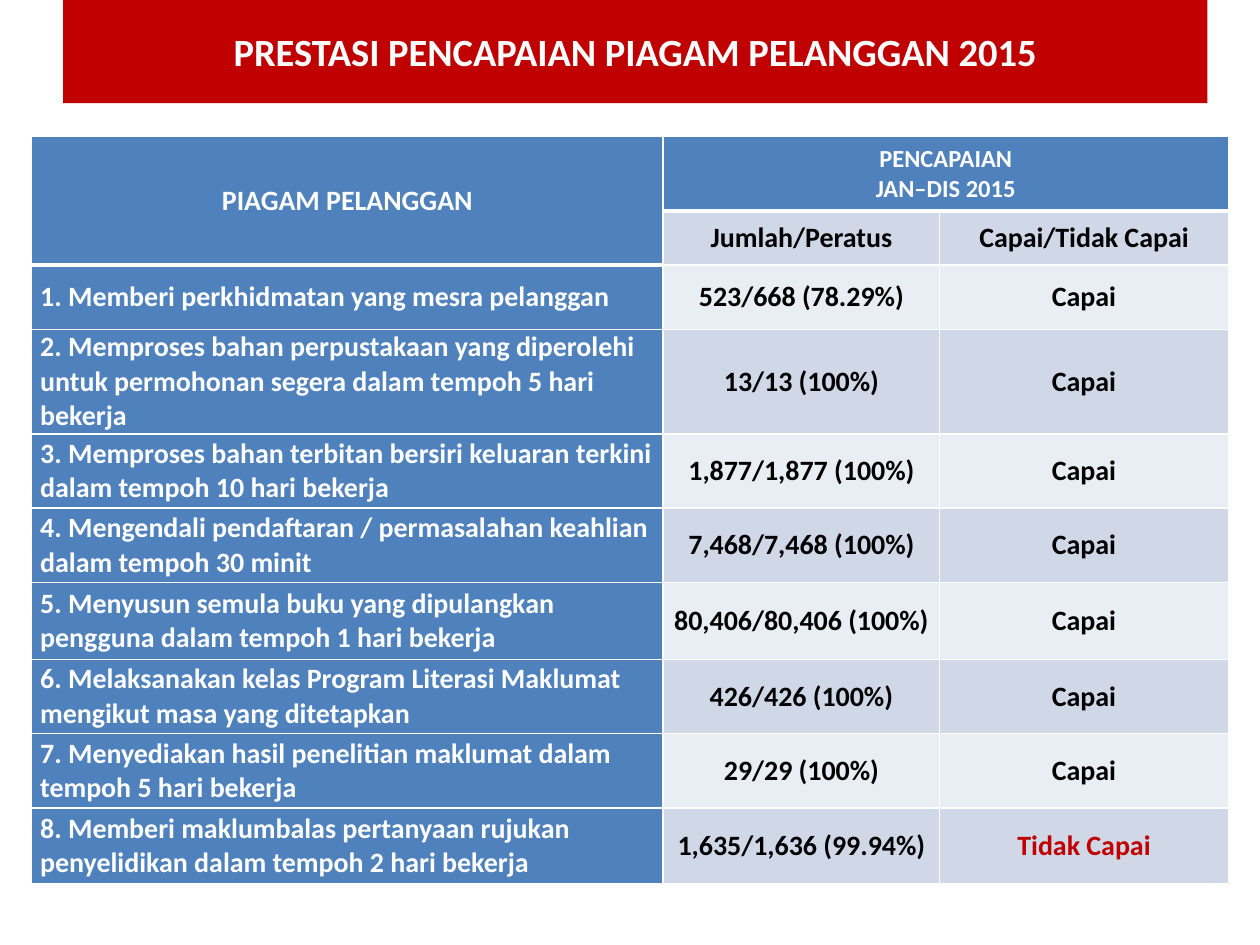
from lxml.etree import SubElement
from pptx import Presentation
from pptx.dml.color import RGBColor
from pptx.enum.text import MSO_ANCHOR, MSO_AUTO_SIZE, PP_ALIGN
from pptx.oxml.ns import qn
from pptx.util import Pt

COLORS = {
    "white": "FFFFFF",
    "black": "000000",
    "red": "C00000",
    "blue": "4F81BD",
    "band_dark": "D0D8E8",
    "band_light": "E9EDF4",
}
COL_WIDTHS = [361, 158, 165]
ROW_HEIGHTS = [42.5, 31, 36.7, 59.7, 42.5, 42.5, 43.9, 42.5, 42.5, 43.2]
PENCAPAIAN = [
    ("Memberi perkhidmatan yang mesra pelanggan", "523/668 (78.29%)", "Capai"),
    ("Memproses bahan perpustakaan yang diperolehi untuk permohonan segera "
     "dalam tempoh 5 hari bekerja", "13/13 (100%)", "Capai"),
    ("Memproses bahan terbitan bersiri keluaran terkini dalam tempoh 10 hari bekerja",
     "1,877/1,877 (100%)", "Capai"),
    ("Mengendali pendaftaran / permasalahan keahlian dalam tempoh 30 minit",
     "7,468/7,468 (100%)", "Capai"),
    ("Menyusun semula buku yang dipulangkan pengguna dalam tempoh 1 hari bekerja",
     "80,406/80,406 (100%)", "Capai"),
    ("Melaksanakan kelas Program Literasi Maklumat mengikut masa yang ditetapkan",
     "426/426 (100%)", "Capai"),
    ("Menyediakan hasil penelitian maklumat dalam tempoh 5 hari bekerja",
     "29/29 (100%)", "Capai"),
    ("Memberi maklumbalas pertanyaan rujukan penyelidikan dalam tempoh 2 hari bekerja",
     "1,635/1,636 (99.94%)", "Tidak Capai"),
]


def rgb(name):
    return RGBColor.from_string(COLORS[name])


def set_attrs(obj, values):
    for name, value in values.items():
        setattr(obj, name, value)


def write_text(tf, text, size, color, align=PP_ALIGN.CENTER):
    for i, line in enumerate(text.split("\n")):
        p = tf.paragraphs[0] if i == 0 else tf.add_paragraph()
        p.alignment = align
        r = p.add_run()
        r.text = line
        set_attrs(r.font, {"name": "Calibri", "size": Pt(size), "bold": True})
        r.font.color.rgb = rgb(color)


def add_title(s, text):
    sp = s.shapes.title
    set_attrs(sp, {"left": Pt(36), "top": Pt(12), "width": Pt(654), "height": Pt(34)})
    sp.fill.solid()
    sp.fill.fore_color.rgb = rgb("red")
    tf = sp.text_frame
    set_attrs(tf, {"word_wrap": True, "auto_size": MSO_AUTO_SIZE.SHAPE_TO_FIT_TEXT,
                   "vertical_anchor": MSO_ANCHOR.MIDDLE})
    write_text(tf, text, 22, "white")


def set_borders(cell, top=1, bottom=1):
    tcPr = cell._tc.get_or_add_tcPr()
    for tag, width in {"lnL": 1, "lnR": 1, "lnT": top, "lnB": bottom}.items():
        ln = SubElement(tcPr, qn(f"a:{tag}"), w=str(Pt(width)))
        SubElement(SubElement(ln, qn("a:solidFill")), qn("a:srgbClr"), val=COLORS["white"])


def format_cell(cell, fill, top=1, bottom=1):
    set_borders(cell, top, bottom)
    cell.fill.solid()
    cell.fill.fore_color.rgb = rgb(fill)
    set_attrs(cell, {"vertical_anchor": MSO_ANCHOR.MIDDLE,
                     "margin_left": Pt(5), "margin_right": Pt(5),
                     "margin_top": 0, "margin_bottom": 0})


def add_charter_table(s):
    table = s.shapes.add_table(len(ROW_HEIGHTS), len(COL_WIDTHS), Pt(18), Pt(78),
                               Pt(sum(COL_WIDTHS)), Pt(sum(ROW_HEIGHTS))).table
    set_attrs(table, {"first_row": False, "horz_banding": False})
    for column, width in zip(table.columns, COL_WIDTHS):
        column.width = Pt(width)
    for row, height in zip(table.rows, ROW_HEIGHTS):
        row.height = Pt(height)

    # Fills and borders: a thick line closes the blue header cells
    for i in range(len(ROW_HEIGHTS)):
        band = "band_dark" if i % 2 else "band_light"
        for j in range(len(COL_WIDTHS)):
            header_end = 1 if j == 0 else 0
            format_cell(table.cell(i, j), "blue" if j == 0 or i == 0 else band,
                        top=3 if i == header_end + 1 else 1,
                        bottom=3 if i == header_end or i == 0 and j == 0 else 1)

    # Header
    table.cell(0, 0).merge(table.cell(1, 0))
    table.cell(0, 1).merge(table.cell(0, 2))
    write_text(table.cell(0, 0).text_frame, "PIAGAM PELANGGAN", 16, "white")
    write_text(table.cell(0, 1).text_frame, "PENCAPAIAN\nJAN–DIS 2015", 14, "white")
    for j, label in enumerate(["Jumlah/Peratus", "Capai/Tidak Capai"], 1):
        write_text(table.cell(1, j).text_frame, label, 16, "black")

    # Charter rows
    for n, (charter, total, status) in enumerate(PENCAPAIAN, 1):
        charter_tf, total_tf, status_tf = (c.text_frame for c in table.rows[n + 1].cells)
        write_text(charter_tf, f"{n}. {charter}", 16, "white", PP_ALIGN.LEFT)
        write_text(total_tf, total, 16, "black")
        write_text(status_tf, status, 16, "black" if status == "Capai" else "red")


def main():
    prs = Presentation()
    set_attrs(prs, {"slide_width": Pt(720), "slide_height": Pt(540)})
    s = prs.slides.add_slide(prs.slide_layouts[5])
    add_title(s, "PRESTASI PENCAPAIAN PIAGAM PELANGGAN 2015")
    add_charter_table(s)
    prs.save("out.pptx")


if __name__ == "__main__":
    main()
